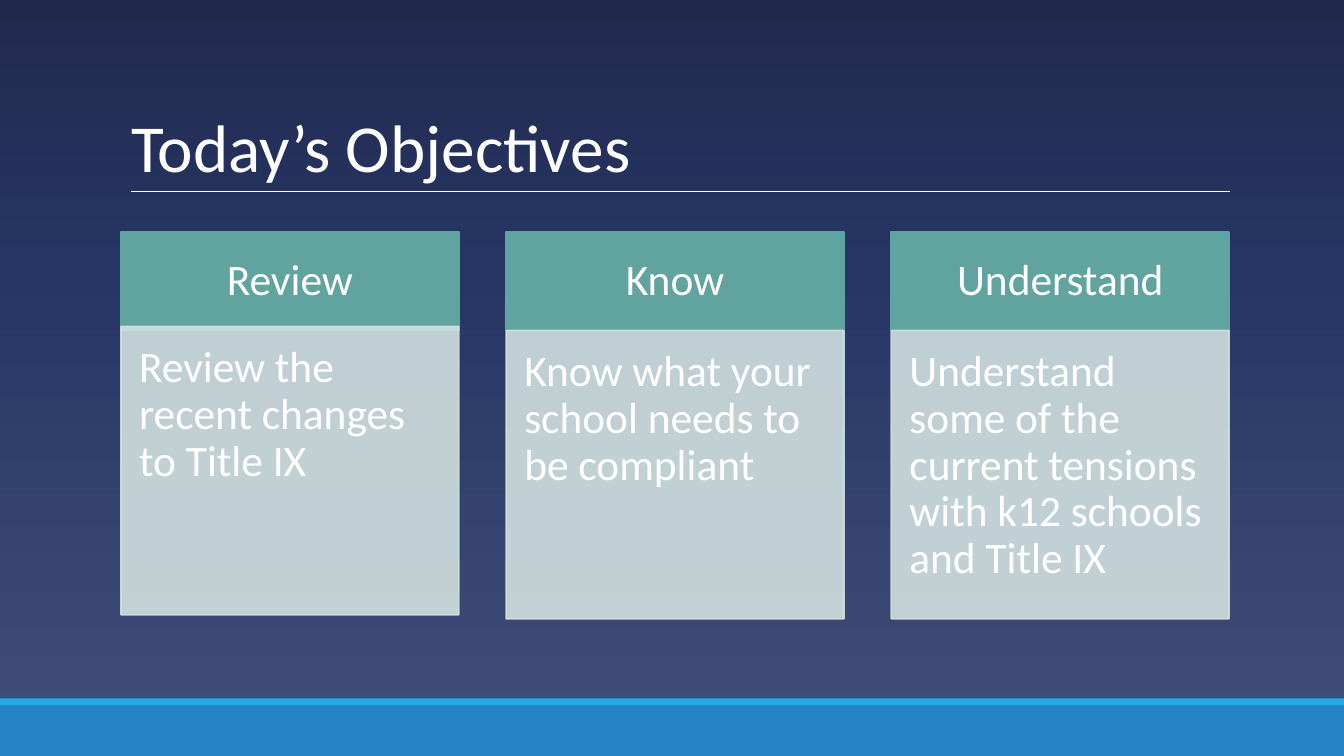
import copy

import pptx
import pptx.dml.color
import pptx.enum.shapes
import pptx.enum.text
import pptx.oxml
import pptx.oxml.ns
import pptx.util

Inches = pptx.util.Inches
RGBColor = pptx.dml.color.RGBColor
Align = pptx.enum.text.PP_ALIGN
Anchor = pptx.enum.text.MSO_ANCHOR
qn = pptx.oxml.ns.qn

SKY = RGBColor(0x1C, 0xAD, 0xE4)
BLUE = RGBColor(0x26, 0x83, 0xC6)
TEAL = RGBColor(0x61, 0xA3, 0x9F)
PALE_TEAL = RGBColor(0xD1, 0xE0, 0xDF)
OFF_WHITE = RGBColor(0xFE, 0xFE, 0xFE)
WHITE = RGBColor(0xFF, 0xFF, 0xFF)
BACKGROUND_STOPS = [
    (0, RGBColor(0x43, 0x4E, 0x79)),
    (0.65, RGBColor(0x26, 0x35, 0x64)),
    (1, RGBColor(0x21, 0x2A, 0x4D)),
]


def add_box(left, top, width, height, color, outlined=False, opacity=100):
    shape = slide.shapes.add_shape(
        pptx.enum.shapes.MSO_SHAPE.RECTANGLE,
        Inches(left), Inches(top), Inches(width), Inches(height),
    )
    shape.shadow.inherit = False
    shape.fill.solid()
    shape.fill.fore_color.rgb = color
    if outlined:
        shape.line.color.rgb = color
        shape.line.width = pptx.util.Pt(1.25)
    else:
        shape.line.fill.background()
    if opacity < 100:
        for color_element in shape.element.spPr.iter(qn("a:srgbClr")):
            alpha = pptx.oxml.parse_xml(
                f'<a:alpha {pptx.oxml.ns.nsdecls("a")} val="{opacity * 1000}"/>'
            )
            color_element.append(alpha)
    return shape


def set_text(shape, text, *, size, color, margins, anchor,
             align=Align.LEFT, spacing=0.9):
    frame = shape.text_frame
    frame.word_wrap = True
    frame.auto_size = pptx.enum.text.MSO_AUTO_SIZE.NONE
    frame.vertical_anchor = anchor
    (frame.margin_left, frame.margin_top,
     frame.margin_right, frame.margin_bottom) = map(Inches, margins)
    paragraph = frame.paragraphs[0]
    paragraph.alignment = align
    paragraph.line_spacing = spacing
    run = paragraph.add_run()
    run.text = text
    run.font.name = "Calibri"
    run.font.size = pptx.util.Pt(size)
    run.font.color.rgb = color


presentation = pptx.Presentation()
presentation.slide_width = Inches(13.33)
presentation.slide_height = Inches(7.5)
slide = presentation.slides.add_slide(presentation.slide_layouts[5])

background = slide.background.fill
background.gradient()
background.gradient_angle = 90
stop_list = next(slide.element.iter(qn("a:gsLst")))
stop_list.insert(1, copy.deepcopy(stop_list[0]))
for stop, (position, color) in zip(background.gradient_stops, BACKGROUND_STOPS):
    stop.position = position
    stop.color.rgb = color

add_box(0, 7, 13.33, 0.5, BLUE)
add_box(0, 6.93, 13.33, 0.07, SKY)

rule = slide.shapes.add_connector(
    pptx.enum.shapes.MSO_CONNECTOR.STRAIGHT,
    Inches(1.3), Inches(1.9), Inches(12.2), Inches(1.9),
)
rule.line.color.rgb = OFF_WHITE
rule.line.width = pptx.util.Pt(0.75)
rule.element.spPr.append(pptx.oxml.parse_xml(
    f'<a:effectLst {pptx.oxml.ns.nsdecls("a")}/>'
))

title = slide.shapes.title
title.left, title.top = Inches(1.2), Inches(0.31)
title.width, title.height = Inches(11), Inches(1.59)
set_text(title, "Today’s Objectives", size=48, color=OFF_WHITE,
         margins=(0.1, 0.05, 0.1, 0.05), anchor=Anchor.BOTTOM, spacing=0.85)

objectives = [
    ("Review", "Review the recent changes to Title IX", 3.24),
    ("Know", "Know what your school needs to be compliant", 3.28),
    ("Understand",
     "Understand some of the current tensions with k12 schools and Title IX", 3.28),
]
for column, (heading, detail, detail_top) in enumerate(objectives):
    left = 1.2 + column * 3.82
    heading_box = add_box(left, 2.3, 3.35, 0.98, TEAL, outlined=True)
    set_text(heading_box, heading, size=31, color=WHITE,
             margins=(0.24, 0.14, 0.24, 0.14), anchor=Anchor.MIDDLE,
             align=Align.CENTER)
    detail_box = add_box(left, detail_top, 3.35, 2.86, PALE_TEAL,
                         outlined=True, opacity=90)
    set_text(detail_box, detail, size=31, color=WHITE,
             margins=(0.18, 0.18, 0.24, 0.27), anchor=Anchor.TOP)

presentation.save("out.pptx")
